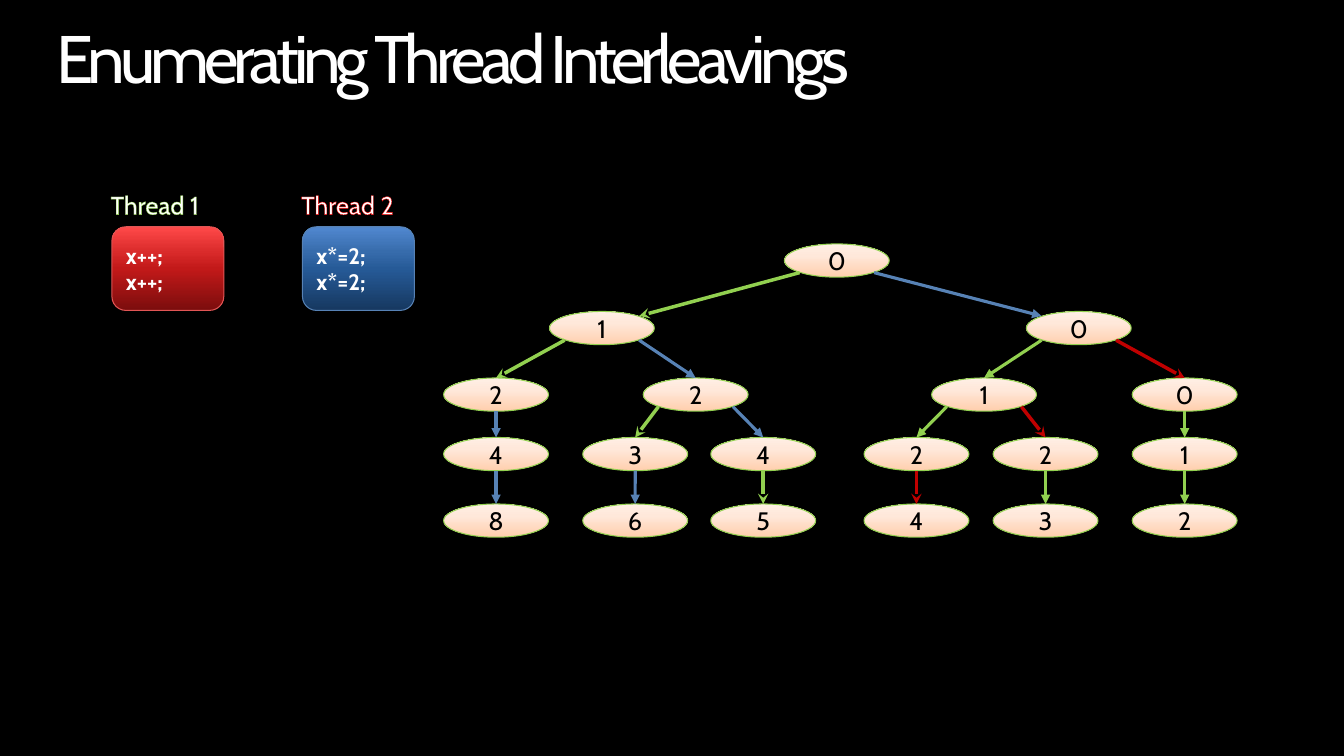
from lxml import etree
from pptx import Presentation
from pptx.dml.color import RGBColor
from pptx.enum import shapes, text
from pptx.oxml import ns
from pptx.util import Inches, Pt

# Colours
BLACK = RGBColor(0x00, 0x00, 0x00)
WHITE = RGBColor(0xFF, 0xFF, 0xFF)
GREEN = RGBColor(0x92, 0xD0, 0x50)
BLUE = RGBColor(0x57, 0x82, 0xB5)
DARK_RED = RGBColor(0xC0, 0x00, 0x00)
BRIGHT_RED = RGBColor(0xFF, 0x00, 0x00)
ROSE = RGBColor(0xE1, 0x55, 0x55)

# Gradients run from bottom to top: (position in percent, colour)
RED_FILL = [(0, "7B0D0D"), (50, "C21919"), (70, "DA2B2B"), (100, "FF4949")]
BLUE_FILL = [(0, "163860"), (50, "265A97"), (70, "376CAC"), (100, "5188D0")]
PEACH_FILL = [(0, "FFCFAE"), (65, "FFE8DA"), (100, "FFEFE5")]

# Content
FONT = "Cabin"
TITLE = "Enumerating Thread Interleavings"
THREADS = [  # label, label outline, code, left, fill, border
    ("Thread 1", GREEN, "x++;\nx++;", 1.11, RED_FILL, ROSE),
    ("Thread 2", BRIGHT_RED, "x*=2;\nx*=2;", 3.0, BLUE_FILL, BLUE),
]

# Each state is named by the steps taken: i = increment, d = double
STATES = {  # steps: (value of x, centre across)
    "": (0, 8.3),
    "i": (1, 5.97), "d": (0, 10.7),
    "ii": (2, 4.92), "id": (2, 6.9), "di": (1, 9.76), "dd": (0, 11.75),
    "iid": (4, 4.92), "idi": (3, 6.3), "idd": (4, 7.57),
    "dii": (2, 9.09), "did": (2, 10.37), "ddi": (1, 11.75),
    "iidd": (8, 4.92), "idid": (6, 6.3), "iddi": (5, 7.57),
    "diid": (4, 9.09), "didi": (3, 10.37), "ddii": (2, 11.75),
}
LEVEL_TOPS = [2.42, 3.09, 3.75, 4.34, 5.0]
STEALTH_STEPS = {"i", "ii", "idi", "iddi", "dd", "did", "diid"}
RED_STEPS = {"dd", "did", "diid"}

NODE_W, NODE_H = 1.04, 0.33
CORNER_X, CORNER_Y = 0.37, 0.12  # from an ellipse's centre to its diagonal point


def style(tf, size, color, bold=False, align=None):
    for p in tf.paragraphs:
        p.alignment = align
        for r in p.runs:
            f = r.font
            f.name, f.size, f.bold = FONT, Pt(size), bold
            f.color.rgb = color


def add_text(left, top, width, height, words, size):
    s = slide.shapes.add_textbox(*map(Inches, (left, top, width, height)))
    s.text_frame.text = words
    style(s.text_frame, size, WHITE)
    return s.text_frame


def add_block(kind, box, words, stops, border):
    s = slide.shapes.add_shape(kind, *map(Inches, box))
    s.shadow.inherit = False
    s.fill.gradient()
    s.fill.gradient_angle = 90
    stop_list = s.element.spPr.find(".//" + ns.qn("a:gsLst"))
    for old in list(stop_list):
        stop_list.remove(old)
    for pos, color in stops:
        gs = etree.SubElement(stop_list, ns.qn("a:gs"), pos=str(pos * 1000))
        etree.SubElement(gs, ns.qn("a:srgbClr"), val=color)
    s.line.color.rgb = border
    s.line.width = Pt(0.75)
    s.text_frame.text = words
    s.text_frame.vertical_anchor = text.MSO_ANCHOR.MIDDLE
    return s


def add_arrow(start, end, color, head):
    c = slide.shapes.add_connector(
        shapes.MSO_CONNECTOR.STRAIGHT, *map(Inches, start + end))
    c.line.color.rgb = color
    c.line.width = Pt(2.5 if head == "stealth" else 2.25)
    etree.SubElement(c.line._get_or_add_ln(), ns.qn("a:tailEnd"), type=head)
    etree.SubElement(c.element.spPr, ns.qn("a:effectLst"))
    return c


def centre(steps):
    return STATES[steps][1], LEVEL_TOPS[len(steps)] + NODE_H / 2


prs = Presentation()
prs.slide_width, prs.slide_height = Inches(13.33), Inches(7.5)
slide = prs.slides.add_slide(prs.slide_layouts[6])
slide.background.fill.solid()
slide.background.fill.fore_color.rgb = BLACK

# Title
tf = add_text(0.56, 0.25, 12.21, 0.73, TITLE, 48)
tf.word_wrap = True
tf.margin_left = tf.margin_right = tf.margin_top = tf.margin_bottom = 0
tf.paragraphs[0].line_spacing = 0.9
tf.paragraphs[0].runs[0].font._element.set("spc", "-360")

# Thread code boxes and their outlined labels
for label, outline, code, left, stops, border in THREADS:
    s = add_block(shapes.MSO_SHAPE.ROUNDED_RECTANGLE,
                  (left, 2.25, 1.11, 0.83), code, stops, border)
    style(s.text_frame, 16, WHITE, True, text.PP_ALIGN.LEFT)
    tf = add_text(left - 0.11, 1.83, 1.16, 0.4, label, 18)
    tf.word_wrap = False
    tf.auto_size = text.MSO_AUTO_SIZE.SHAPE_TO_FIT_TEXT
    ln = etree.Element(ns.qn("a:ln"), w=str(Pt(0.75)))
    solid = etree.SubElement(ln, ns.qn("a:solidFill"))
    etree.SubElement(solid, ns.qn("a:srgbClr"), val=str(outline))
    tf.paragraphs[0].runs[0].font._element.insert(0, ln)

# States of the tree
nodes = {}
for steps, (value, x) in STATES.items():
    box = (x - NODE_W / 2, LEVEL_TOPS[len(steps)], NODE_W, NODE_H)
    s = add_block(shapes.MSO_SHAPE.OVAL, box, str(value), PEACH_FILL, GREEN)
    style(s.text_frame, 18, BLACK, align=text.PP_ALIGN.CENTER)
    nodes[steps] = s

# Arrows from each state to the next
for steps in list(STATES)[1:]:
    (px, py), (x, y) = centre(steps[:-1]), centre(steps)
    side = (x > px) - (x < px)
    drop = CORNER_Y if side else NODE_H / 2
    start = (px + side * CORNER_X, py + drop)
    color = (DARK_RED if steps in RED_STEPS
             else GREEN if steps[-1] == "i" else BLUE)
    head = "stealth" if steps in STEALTH_STEPS else "triangle"
    if len(steps) == 1:  # the long arrows meet the near upper corner
        add_arrow(start, (x - side * CORNER_X, y - CORNER_Y), color, head)
    else:
        c = add_arrow(start, (x, y - NODE_H / 2), color, head)
        c.end_connect(nodes[steps], 0)

prs.save("out.pptx")
